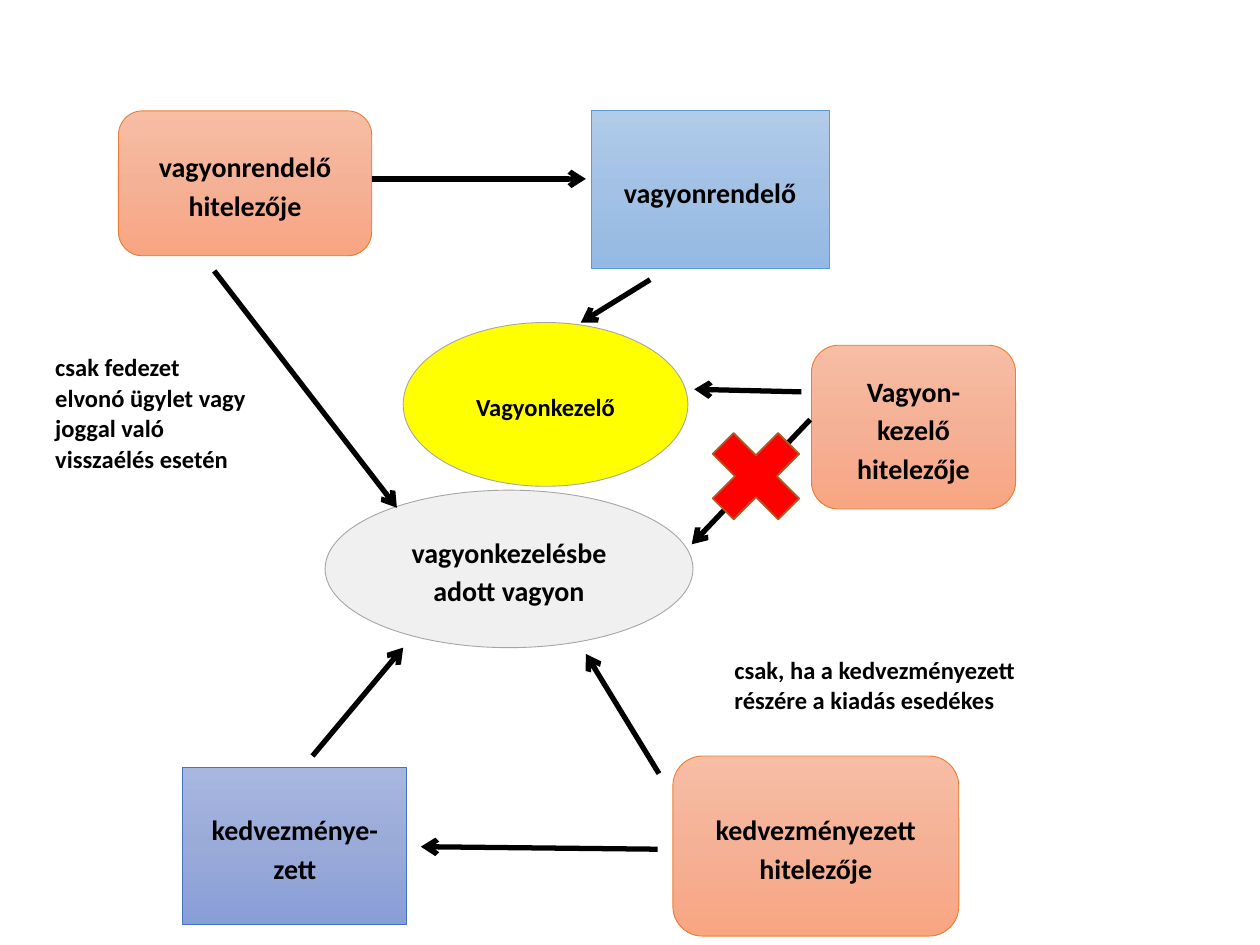
from copy import deepcopy

from lxml.etree import SubElement
from pptx import Presentation
from pptx.dml.color import RGBColor
from pptx.enum.shapes import MSO_CONNECTOR, MSO_SHAPE
from pptx.enum.text import MSO_ANCHOR, PP_ALIGN
from pptx.oxml.ns import qn
from pptx.util import Inches, Pt

ORANGE = ["F7BDA5", "F5B196", "F8A582"]
BLUE = ["B1CBE9", "A3C1E5", "93B9E4"]
INDIGO = ["A8B7DF", "9AABD9", "889ED7"]
ORANGE_LINE = "ED7D31"
GREY_LINE = "A5A5A5"


def rgb(value):
    return RGBColor.from_string(value)


def paint(shape, colours):
    fill = shape.fill
    if len(colours) == 1:
        fill.solid()
        fill.fore_color.rgb = rgb(colours[0])
        return
    fill.gradient()
    fill.gradient_angle = 270
    first = shape._element.spPr.find(".//" + qn("a:gs"))
    first.addnext(deepcopy(first))
    for stop, colour, position in zip(fill.gradient_stops, colours, (0, 0.5, 1)):
        stop.color.rgb = rgb(colour)
        stop.position = position


def style_text(paragraph, text, size):
    paragraph.text = text
    paragraph.font.name = "Calibri"
    paragraph.font.size = Pt(size)
    paragraph.font.bold = True
    paragraph.font.color.rgb = rgb("000000")


def add_node(slide, origin, box, kind, colours, outline, text="", size=16, weight=0.5):
    left, top, width, height = box
    node = slide.shapes.add_shape(
        kind, Inches(origin[0] + left), Inches(origin[1] + top), Inches(width), Inches(height))
    node.shadow.inherit = False
    paint(node, colours)
    node.line.color.rgb = rgb(outline)
    node.line.width = Pt(weight)
    if text:
        node.text_frame.word_wrap = True
        node.text_frame.vertical_anchor = MSO_ANCHOR.MIDDLE
        label = node.text_frame.paragraphs[0]
        style_text(label, text, size)
        label.alignment = PP_ALIGN.CENTER
        label.line_spacing = 1.15
        label.space_after = Pt(10)


def add_arrow(slide, origin, start, end):
    points = [Inches(origin[i] + point[i]) for point in (start, end) for i in (0, 1)]
    arrow = slide.shapes.add_connector(MSO_CONNECTOR.STRAIGHT, *points)
    arrow.line.color.rgb = rgb("000000")
    arrow.line.width = Pt(3)
    SubElement(arrow.line._get_or_add_ln(), qn("a:tailEnd"), type="arrow")
    SubElement(arrow._element.spPr, qn("a:effectLst"))


def add_note(slide, origin, box, lines):
    left, top, width, height = box
    note = slide.shapes.add_textbox(
        Inches(origin[0] + left), Inches(origin[1] + top), Inches(width), Inches(height))
    frame = note.text_frame
    frame.word_wrap = True
    frame.vertical_anchor = MSO_ANCHOR.MIDDLE
    for index, line in enumerate(lines):
        paragraph = frame.add_paragraph() if index else frame.paragraphs[0]
        style_text(paragraph, line, 14)
        paragraph.line_spacing = Pt(17.5)


def draw_settlor(slide, origin):
    add_node(slide, origin, (4.35, 0, 1.89, 1.25), MSO_SHAPE.RECTANGLE,
             BLUE, "5B9BD5", "vagyonrendelő")
    add_node(slide, origin, (0.6, 0, 2.01, 1.15), MSO_SHAPE.ROUNDED_RECTANGLE,
             ORANGE, ORANGE_LINE, "vagyonrendelő hitelezője")
    add_arrow(slide, origin, (2.61, 0.54), (4.31, 0.54))
    add_arrow(slide, origin, (1.36, 1.27), (2.81, 3.15))
    add_arrow(slide, origin, (4.82, 1.34), (4.27, 1.68))
    add_note(slide, origin, (0, 1.89, 1.9, 1),
             ["csak fedezet", "elvonó ügylet vagy", "joggal való", "visszaélés esetén"])


def draw_trust(slide, origin):
    add_node(slide, origin, (0.62, 0, 2.26, 1.3), MSO_SHAPE.OVAL,
             ["FFFF00"], GREY_LINE, "Vagyonkezelő", size=14)
    add_node(slide, origin, (3.86, 0.18, 1.62, 1.3), MSO_SHAPE.ROUNDED_RECTANGLE,
             ORANGE, ORANGE_LINE, "Vagyon-kezelő hitelezője")
    add_node(slide, origin, (0, 1.33, 2.92, 1.25), MSO_SHAPE.OVAL,
             ["F1F0F0"], GREY_LINE, "vagyonkezelésbe adott vagyon")
    add_arrow(slide, origin, (3.78, 0.55), (2.93, 0.53))
    add_arrow(slide, origin, (3.85, 0.77), (2.91, 1.76))
    add_node(slide, origin, (2.92, 0.72, 1, 1), MSO_SHAPE.MATH_MULTIPLY,
             ["FF0000"], "AF5C24", weight=1)


def draw_beneficiary(slide, origin):
    add_node(slide, origin, (0, 0.95, 1.78, 1.25), MSO_SHAPE.RECTANGLE,
             INDIGO, "4472C4", "kedvezménye-zett")
    add_node(slide, origin, (3.89, 0.86, 2.27, 1.43), MSO_SHAPE.ROUNDED_RECTANGLE,
             ORANGE, ORANGE_LINE, "kedvezményezett hitelezője")
    add_arrow(slide, origin, (3.77, 1.6), (1.89, 1.58))
    add_arrow(slide, origin, (3.78, 1), (3.2, 0.05))
    add_arrow(slide, origin, (1.03, 0.86), (1.75, 0))
    add_note(slide, origin, (4.28, -0.01, 2.8, 0.6),
             ["csak, ha a kedvezményezett", "részére a kiadás esedékes"])


def main():
    presentation = Presentation()
    presentation.slide_width = Inches(10)
    presentation.slide_height = Inches(7.5)
    slide = presentation.slides.add_slide(presentation.slide_layouts[6])
    draw_trust(slide, (2.58, 2.56))
    draw_settlor(slide, (0.34, 0.88))
    draw_beneficiary(slide, (1.45, 5.14))
    presentation.save("out.pptx")


if __name__ == "__main__":
    main()
